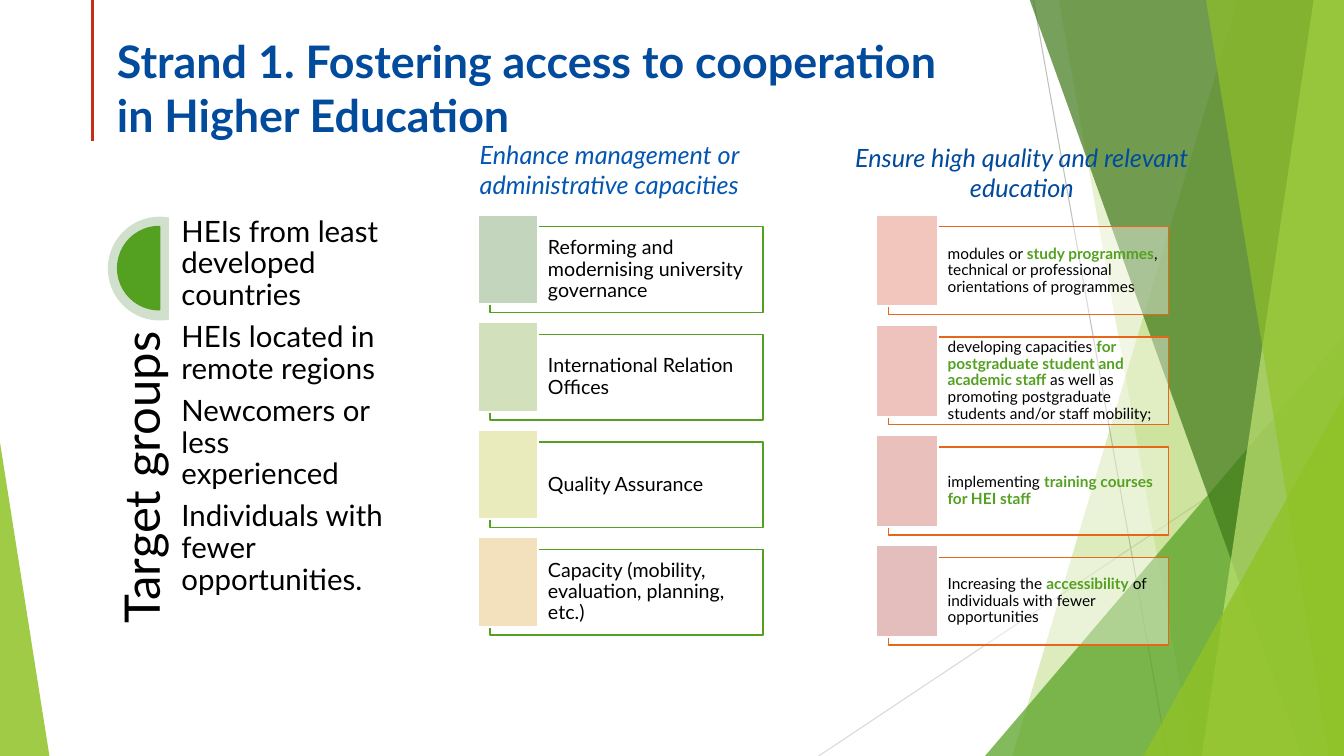
from lxml import etree
from pptx import Presentation
from pptx import util as u
from pptx.dml.color import RGBColor
from pptx.enum import shapes, text
from pptx.oxml import ns

Inches = u.Inches
FONT = "Lato"
COLORS = {
    "white": "FFFFFF", "black": "000000", "title": "024B9C", "heading": "0356B1",
    "red": "C42F1A", "green": "54A021", "lime": "90C226", "forest": "3F7819",
    "pale_lime": "C0E474", "halo": "D1DFCD", "orange": "E76618",
    "gray": "BFBFBF", "light_gray": "D9D9D9",
}
CAPACITY_TILES = ["C3D6BD", "D2E1BC", "E9EBBC", "F3E0BD"]
QUALITY_TILES = ["F3C6BD", "EFC3BD", "EAC0BD", "E4BEBD"]
TARGETS = [
    "HEIs from least developed countries",
    "HEIs located in remote regions",
    "Newcomers or less experienced",
    "Individuals with fewer opportunities.",
]
CAPACITIES = [
    ["Reforming and modernising university governance"],
    ["International Relation Offices"],
    ["Quality Assurance"],
    ["Capacity (mobility, evaluation, planning, etc.)"],
]
QUALITIES = [
    ["modules or ", "study programmes",
     ", technical or professional orientations of programmes"],
    ["developing capacities ", "for postgraduate student and academic staff ",
     "as well as promoting postgraduate students and/or staff mobility;"],
    ["implementing ", "training courses for HEI staff"],
    ["Increasing the ", "accessibility", " of individuals with fewer opportunities"],
]


def rgb(color):
    """Return the colour for a palette name or a hex string."""
    return RGBColor.from_string(COLORS.get(color, color))


def paint(shape, fill, alpha=100, line=None, width=1):
    """Give a shape a flat fill, an optional outline and no shadow."""
    shape.shadow.inherit = False
    shape.fill.solid()
    shape.fill.fore_color.rgb = rgb(fill)
    if alpha < 100:
        color = shape._element.spPr.find(".//" + ns.qn("a:srgbClr"))
        etree.SubElement(color, ns.qn("a:alpha"), val=str(alpha * 1000))
    if line:
        shape.line.color.rgb = rgb(line)
        shape.line.width = u.Pt(width)
    else:
        shape.line.fill.background()


def add_preset(slide, preset, box, adjustments=()):
    """Add a preset shape in a box given in inches."""
    shape = slide.shapes.add_shape(preset, *map(Inches, box))
    for i, value in enumerate(adjustments):
        shape.adjustments[i] = value
    return shape


def add_line(slide, start, end, color, width):
    """Draw a straight line between two points."""
    line = slide.shapes.add_connector(
        shapes.MSO_CONNECTOR.STRAIGHT, *map(Inches, (*start, *end)))
    line.line.color.rgb = rgb(color)
    line.line.width = u.Pt(width)
    etree.SubElement(line._element.spPr, ns.qn("a:effectLst"))


def set_frame(frame, insets, anchor):
    """Set the insets, anchor and wrapping of a text frame."""
    frame.word_wrap = True
    frame.auto_size = text.MSO_AUTO_SIZE.NONE
    frame.vertical_anchor = anchor
    (frame.margin_left, frame.margin_top,
     frame.margin_right, frame.margin_bottom) = map(Inches, insets)


def style(paragraph, size, color="black", align=text.PP_ALIGN.LEFT, tight=True):
    """Format a paragraph, with tight lines and a gap after it if asked."""
    paragraph.alignment = align
    paragraph.space_before = u.Pt(0)
    if tight:
        paragraph.line_spacing = 0.9
        paragraph.space_after = u.Pt(round(0.35 * size, 2))
    paragraph.font.name = FONT
    paragraph.font.size = u.Pt(size)
    paragraph.font.color.rgb = rgb(color)


def move(shape, box):
    """Place a shape in a box given in inches."""
    shape.left, shape.top, shape.width, shape.height = map(Inches, box)


def add_backdrop(slide, width, height):
    """Draw the green facets, the thin lines and the red title bar."""
    add_line(slide, (10.25, 0), (11.58, height), "gray", 0.75)
    add_line(slide, (width, 4.03), (8.12, height), "light_gray", 0.75)

    def facet(top_x, bottom_x, color, alpha):
        builder = slide.shapes.build_freeform(Inches(top_x), Inches(-0.01))
        corners = [(width, -0.01), (width, height), (bottom_x, height)]
        builder.add_line_segments([tuple(map(Inches, c)) for c in corners])
        paint(builder.convert_to_shape(), color, alpha)

    def wedge(left, top, wedge_width, apex, color, alpha):
        box = (left, top, wedge_width, height - top)
        paint(add_preset(slide, shapes.MSO_SHAPE.ISOSCELES_TRIANGLE, box, [apex]),
              color, alpha)

    facet(12.28, 10.04, "lime", 30)
    facet(10.5, 11.83, "lime", 20)
    wedge(9.77, 3.33, 3.56, 1, "green", 72)
    facet(10.21, 12.91, "forest", 70)
    facet(13.03, 11.92, "pale_lime", 70)
    facet(11.96, 13.18, "lime", 65)
    wedge(11.34, 3.93, 1.99, 1, "lime", 80)
    wedge(0, 4.39, 0.49, 0, "lime", 85)
    add_line(slide, (0.92, 0), (0.92, 1.4), "red", 2.25)


def add_title(slide, box):
    """Fill the title placeholder."""
    title = slide.shapes.title
    move(title, box)
    set_frame(title.text_frame, (0.1, 0.05, 0.1, 0), text.MSO_ANCHOR.BOTTOM)
    title.text_frame.text = (
        "Strand 1. Fostering access to cooperation \vin Higher Education")
    heading = title.text_frame.paragraphs[0]
    style(heading, 32, "title", tight=False)
    heading.font.bold = True


def add_target_groups(slide, left, top):
    """Draw the half disc, the upright label and the list of target groups."""
    halo = add_preset(slide, shapes.MSO_SHAPE.CHORD, (left, top, 1.03, 1.03), [48, 168])
    paint(halo, "halo")
    disc = add_preset(slide, shapes.MSO_SHAPE.PIE,
                      (left + 0.1, top + 0.1, 0.82, 0.82), [54, 162])
    paint(disc, "green", line="green", width=1.5)

    label = slide.shapes.add_textbox(
        *map(Inches, (left - 1.18, top + 2.32, 2.98, 0.62)))
    label.rotation = 270
    set_frame(label.text_frame, (0, 0, 0, 0), text.MSO_ANCHOR.BOTTOM)
    label.text_frame.text = "Target groups"
    style(label.text_frame.paragraphs[0], 35, align=text.PP_ALIGN.RIGHT)

    groups = slide.placeholders[1]
    move(groups, (left + 0.73, top, 2.06, 4.12))
    set_frame(groups.text_frame, (0, 0, 0, 0), text.MSO_ANCHOR.TOP)
    groups.text_frame.text = "\n".join(TARGETS)
    for group in groups.text_frame.paragraphs:
        properties = group._p.get_or_add_pPr()
        properties.set("marL", "0")
        properties.set("indent", "0")
        etree.SubElement(properties, ns.qn("a:buNone"))
        style(group, 21)


def add_heading(slide, box, words, color, align):
    """Write the italic heading of a column."""
    heading = slide.shapes.add_textbox(*map(Inches, box))
    set_frame(heading.text_frame, (0.1, 0.05, 0.1, 0.05), text.MSO_ANCHOR.TOP)
    heading.text_frame.text = words
    line = heading.text_frame.paragraphs[0]
    style(line, 18, color, align, tight=False)
    line.font.italic = True


def add_cards(slide, box, card_height, items, tiles, outline, size, inset):
    """Stack evenly spaced cards, each with a tile; odd parts are highlighted."""
    left, top, width, height = box
    pitch = (height - card_height) / (len(items) - 1)
    tile_width = 0.7 * card_height
    for i, (parts, tile_color) in enumerate(zip(items, tiles)):
        y = top + i * pitch
        card = add_preset(slide, shapes.MSO_SHAPE.RECTANGLE, (left, y, width, card_height))
        paint(card, "white", 40, outline)
        set_frame(card.text_frame, (tile_width - 0.02, inset, inset, inset),
                  text.MSO_ANCHOR.MIDDLE)
        words = card.text_frame.paragraphs[0]
        style(words, size)
        for j, part in enumerate(parts):
            run = words.add_run()
            run.text = part
            if j % 2:
                run.font.bold = True
                run.font.color.rgb = rgb("green")
        tile = add_preset(slide, shapes.MSO_SHAPE.RECTANGLE,
                          (left - 0.12, y - 0.12, tile_width, card_height + 0.04))
        paint(tile, tile_color, line="white", width=1.5)


def main():
    """Build the slide and save it."""
    deck = Presentation()
    deck.slide_width, deck.slide_height = Inches(13.33), Inches(7.5)
    slide = deck.slides.add_slide(deck.slide_layouts[1])
    add_backdrop(slide, 13.33, 7.5)
    add_title(slide, (1.06, 0.54, 11.5, 0.86))
    add_target_groups(slide, 1.07, 2.15)
    add_cards(slide, (4.86, 2.25, 2.71, 4.05), 0.85, CAPACITIES, CAPACITY_TILES,
              "green", 14, 0.06)
    add_cards(slide, (8.81, 2.25, 2.78, 4.15), 0.87, QUALITIES, QUALITY_TILES,
              "orange", 11, 0.05)
    add_heading(slide, (4.66, 1.33, 3.3, 0.71),
                "Enhance management or administrative capacities",
                "heading", text.PP_ALIGN.LEFT)
    add_heading(slide, (8.34, 1.36, 3.59, 0.71),
                "Ensure high quality and relevant education",
                "title", text.PP_ALIGN.CENTER)
    deck.save("out.pptx")


if __name__ == "__main__":
    main()
